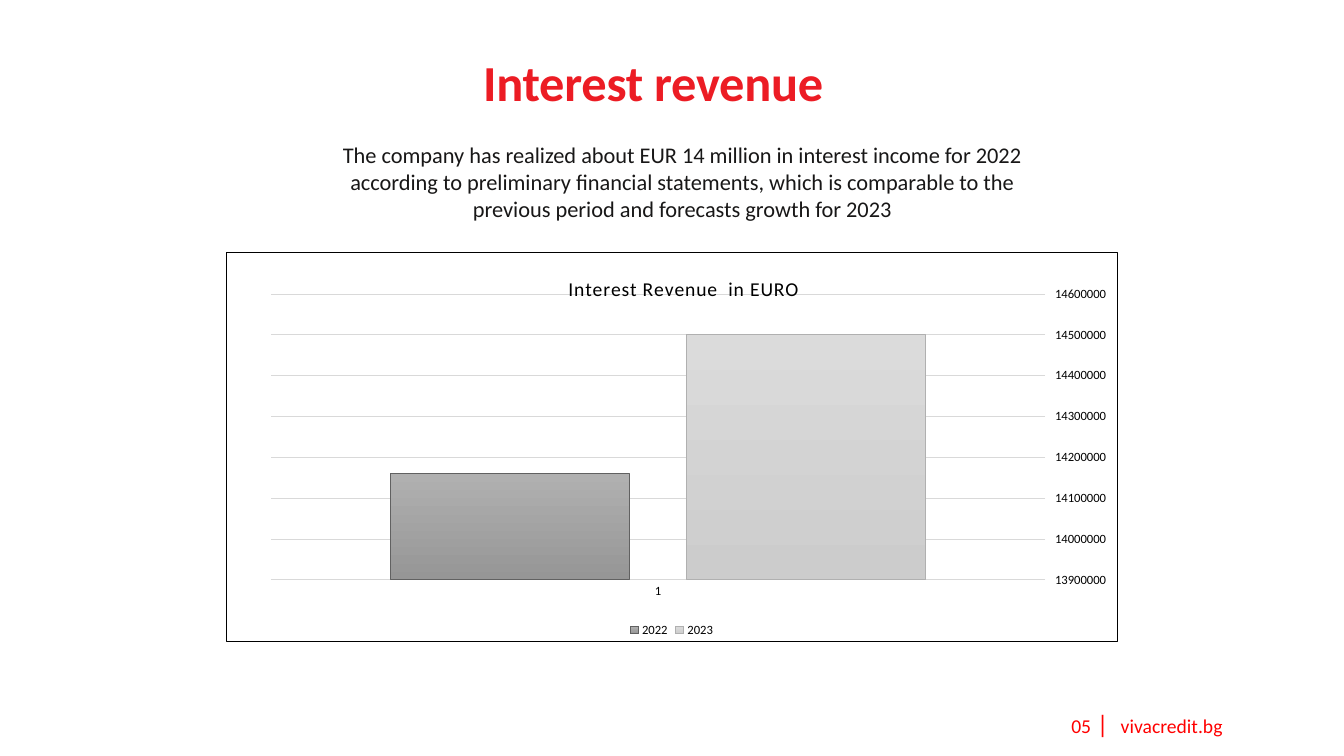
from dataclasses import dataclass

import pptx
import pptx.chart.data
import pptx.dml.color
import pptx.enum.chart
import pptx.enum.text
import pptx.oxml
import pptx.oxml.ns
import pptx.util

CELL = pptx.util.Inches(1 / 12)
COLS, ROWS = 160, 90


@dataclass(frozen=True)
class Theme:
    """Colours, font and type sizes of the deck."""
    font: str = "Calibri"
    title: str = "EC1C24"
    body: str = "181717"
    footer: str = "FF0000"
    ink: str = "000000"
    grid: str = "D9D9D9"
    bars: tuple = (("B0B0B0", "969696", "616161"), ("DBDBDB", "CCCCCC", "B0B0B0"))
    title_size: int = 36
    body_size: int = 16
    divider_size: int = 18
    caption_size: int = 14
    label_size: int = 9
    line: float = 0.75


T = Theme()


def rgb(value):
    """Turn a hex string into a colour."""
    return pptx.dml.color.RGBColor.from_string(value)


def place(s, box):
    """Move a shape to a box given in grid columns and rows."""
    s.left, s.top, s.width, s.height = (round(v * CELL) for v in box)


def style(font, size, color, bold=False):
    """Format a font."""
    font.name, font.size, font.bold = T.font, pptx.util.Pt(size), bold
    font.color.rgb = rgb(color)


def write(p, text, size, color, bold=False, spacing=None):
    """Add text to a paragraph, breaking it at each line end."""
    for i, line in enumerate(text.split("\n")):
        if i:
            p.add_line_break()
        r = p.add_run()
        r.text = line
        style(r.font, size, color, bold)
        if spacing is not None:
            r.font._element.set("spc", str(round(spacing * 100)))


def stroke(line, color):
    """Draw a thin solid line."""
    line.color.rgb = rgb(color)
    line.width = pptx.util.Pt(T.line)


def add_centered(s, box, text, inset, **fmt):
    """Fill a placeholder with one centred paragraph without a bullet."""
    place(s, box)
    tf = s.text_frame
    tf.word_wrap = True
    tf.auto_size = pptx.enum.text.MSO_AUTO_SIZE.NONE
    tf.vertical_anchor = pptx.enum.text.MSO_ANCHOR.TOP
    tf.margin_left = tf.margin_right = pptx.util.Inches(inset * 2)
    tf.margin_top = tf.margin_bottom = pptx.util.Inches(inset)
    p = tf.paragraphs[0]
    p.alignment = pptx.enum.text.PP_ALIGN.CENTER
    p.space_before = pptx.util.Pt(0)
    pPr = p._p.get_or_add_pPr()
    pPr.set("marL", "0")
    pPr.set("indent", "0")
    pPr.append(pptx.oxml.parse_xml(f'<a:buNone {pptx.oxml.ns.nsdecls("a")}/>'))
    write(p, text, **fmt)


def set_layout(parent, index, **shares):
    """Fix a chart part at shares of the chart's size."""
    for old in parent.findall(pptx.oxml.ns.qn("c:layout")):
        parent.remove(old)
    target = '<c:layoutTarget val="inner"/>' if "w" in shares else ""
    modes = '<c:xMode val="edge"/><c:yMode val="edge"/>'
    values = "".join(f'<c:{k} val="{v}"/>' for k, v in shares.items())
    parent.insert(index, pptx.oxml.parse_xml(
        f'<c:layout {pptx.oxml.ns.nsdecls("c")}><c:manualLayout>'
        f'{target}{modes}{values}</c:manualLayout></c:layout>'))


def format_axes(chart):
    """Set the scale, grid and labels of both axes."""
    cat, val = chart.category_axis, chart.value_axis
    for axis in (cat, val):
        axis.major_tick_mark = axis.minor_tick_mark = pptx.enum.chart.XL_TICK_MARK.NONE
        style(axis.tick_labels.font, T.label_size, T.ink)
    stroke(cat.format.line, T.grid)
    val.format.line.fill.background()
    val.has_major_gridlines = True
    stroke(val.major_gridlines.format.line, T.grid)
    val.minimum_scale, val.maximum_scale, val.major_unit = 13900000, 14600000, 100000
    val.tick_label_position = pptx.enum.chart.XL_TICK_LABEL_POSITION.HIGH


def add_revenue_chart(slide, box):
    """Draw the framed column chart of interest revenue."""
    data = pptx.chart.data.CategoryChartData()
    data.categories = ["1"]
    data.add_series("2022", [14160000])
    data.add_series("2023", [14500000])
    chart = slide.shapes.add_chart(
        pptx.enum.chart.XL_CHART_TYPE.COLUMN_CLUSTERED,
        *(round(v * CELL) for v in box), data).chart
    style(chart.font, T.label_size, T.ink)
    chart.has_title = True
    write(chart.chart_title.text_frame.paragraphs[0], "Interest Revenue  in EURO",
          T.caption_size, T.ink, spacing=0.5)
    set_layout(chart.chart_title._element, 1, x=0.38, y=0.05)
    set_layout(chart._chartSpace.chart.plotArea, 0, x=0.05, y=0.107, w=0.869, h=0.735)
    format_axes(chart)
    chart.has_legend = True
    chart.legend.position = pptx.enum.chart.XL_LEGEND_POSITION.BOTTOM
    chart.legend.include_in_layout = False
    style(chart.legend.font, T.label_size, T.ink)
    plot = chart.plots[0]
    plot.gap_width, plot.overlap, plot.vary_by_categories = 100, -24, False
    for series, (top, bottom, edge) in zip(plot.series, T.bars):
        fill = series.format.fill
        fill.gradient()
        fill.gradient_angle = 270
        for stop, color in zip(fill.gradient_stops, (top, bottom)):
            stop.color.rgb = rgb(color)
        stroke(series.format.line, edge)
    chart._chartSpace.chart.addnext(pptx.oxml.parse_xml(
        f'<c:spPr {pptx.oxml.ns.nsdecls("c", "a")}><a:noFill/>'
        f'<a:ln w="{pptx.util.Pt(T.line)}"><a:solidFill><a:srgbClr val="{T.ink}"/>'
        '</a:solidFill></a:ln></c:spPr>'))


def add_footer(slide, box):
    """Write the page number and web address, parted by a bar."""
    s = slide.shapes.add_textbox(0, 0, 0, 0)
    place(s, box)
    tf = s.text_frame
    tf.word_wrap = True
    p = tf.paragraphs[0]
    p._p.get_or_add_pPr().append(pptx.oxml.parse_xml(
        f'<a:tabLst {pptx.oxml.ns.nsdecls("a")}>'
        f'<a:tab pos="{round(5.88 * CELL)}" algn="l"/></a:tabLst>'))
    for text, size in (("05", T.caption_size), (" |\t", T.divider_size),
                       ("vivacredit.bg", T.caption_size)):
        write(p, text, size, T.footer)


def main():
    """Build and save the slide."""
    prs = pptx.Presentation()
    prs.slide_width, prs.slide_height = COLS * CELL, ROWS * CELL
    slide = prs.slides.add_slide(prs.slide_layouts[1])
    add_centered(slide.shapes.title, (9.72, 6, 136.08, 7.44), "Interest revenue",
                 0.01, size=T.title_size, color=T.title, bold=True, spacing=-0.2)
    add_centered(slide.placeholders[1], (21.72, 16.2, 119.04, 10.92),
                 "The company has realized about EUR 14 million in interest income for 2022\n"
                 "according to preliminary financial statements, which is comparable to the\n"
                 "previous period and forecasts growth for 2023",
                 0.05, size=T.body_size, color=T.body)
    add_revenue_chart(slide, (26.88, 30, 106.2, 46.44))
    add_footer(slide, (126.36, 83.76, 27.12, 4.8))
    prs.save("out.pptx")


if __name__ == "__main__":
    main()
